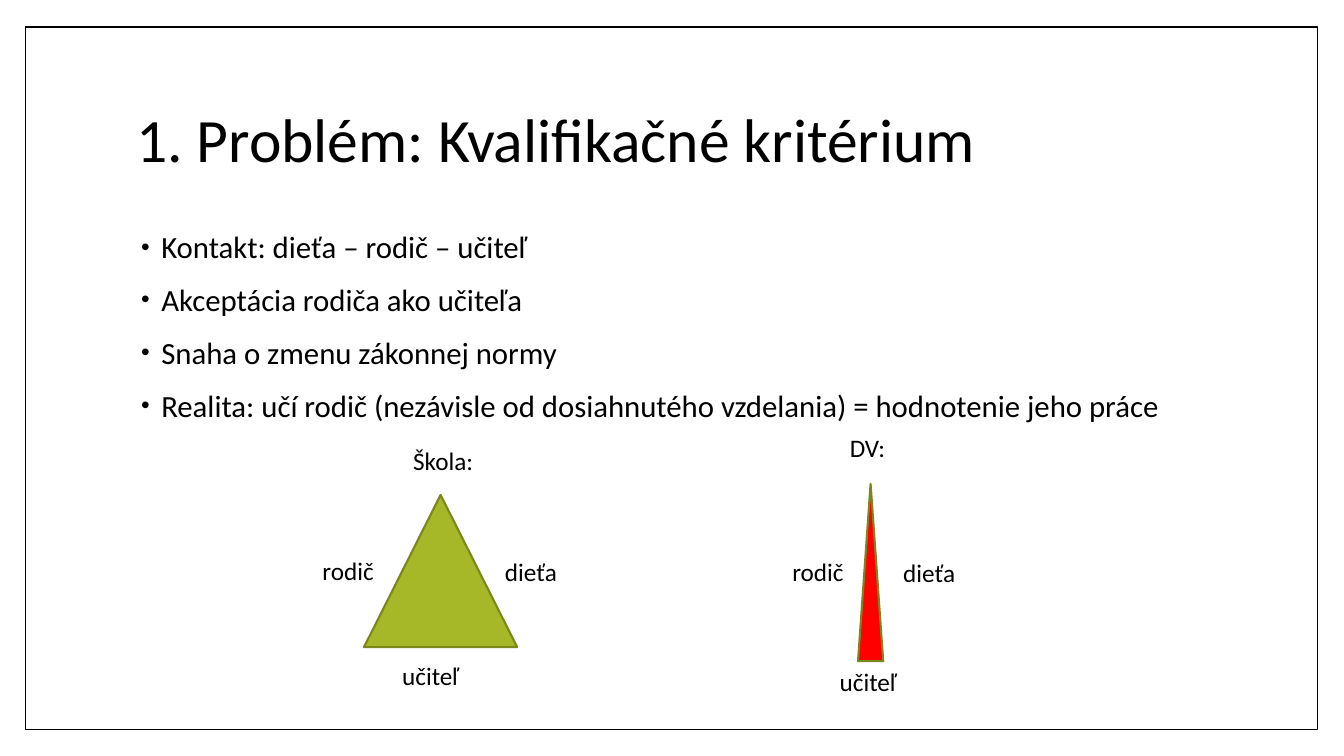
"""Build the slide that compares the contact triangles of school and home education."""
from typing import NamedTuple

from lxml.etree import SubElement
from pptx import Presentation
from pptx.dml.color import RGBColor
from pptx.enum.shapes import MSO_SHAPE as Preset
from pptx.enum.text import MSO_ANCHOR as Anchor, MSO_AUTO_SIZE as AutoSize, PP_ALIGN as Align
from pptx.oxml.ns import qn
from pptx.util import Emu, Pt

PX = 9144
COLORS = {
    "paper": "FFFFFF",
    "ink": "000000",
    "school": "A6B727",
    "home": "FF0000",
    "edge": "7B871D",
}
FONT = "Calibri"
TITLE = "1. Problém: Kvalifikačné kritérium"
POINTS = [
    "Kontakt: dieťa – rodič – učiteľ",
    "Akceptácia rodiča ako učiteľa",
    "Snaha o\u00a0zmenu zákonnej normy".replace("\u00a0", " "),
    "Realita: učí rodič (nezávisle od dosiahnutého vzdelania) = hodnotenie jeho práce",
]


class Box(NamedTuple):
    left: int
    top: int
    width: int
    height: int


class Figure(NamedTuple):
    preset: Preset
    box: Box
    fill: str
    line: str
    weight: float


class Label(NamedTuple):
    text: str
    box: Box


FRAME = Figure(Preset.RECTANGLE, Box(25, 27, 1282, 697), "paper", "ink", 1)
TRIANGLES = [
    Figure(Preset.ISOSCELES_TRIANGLE, Box(361, 491, 152, 151), "school", "edge", 1.5),
    Figure(Preset.ISOSCELES_TRIANGLE, Box(851, 480, 25, 176), "home", "edge", 1.5),
]
LABELS = [
    Label("učiteľ", Box(389, 650, 82, 40)),
    Label("učiteľ", Box(823, 656, 82, 40)),
    Label("rodič", Box(310, 546, 129, 42)),
    Label("rodič", Box(776, 547, 129, 42)),
    Label("dieťa", Box(491, 547, 97, 41)),
    Label("dieťa", Box(886, 548, 97, 41)),
    Label("Škola:", Box(400, 437, 97, 40)),
    Label("DV:", Box(833, 424, 66, 40)),
]


def color(name: str) -> RGBColor:
    return RGBColor.from_string(COLORS[name])


def emu(box: Box) -> list[Emu]:
    return [Emu(length * PX) for length in box]


def place(shape, box: Box) -> None:
    for name, length in zip(Box._fields, emu(box)):
        setattr(shape, name, length)


def write(frame, lines: list[str], size: int, anchor: Anchor, **para_format) -> None:
    frame_format = {"word_wrap": True, "auto_size": AutoSize.NONE, "vertical_anchor": anchor}
    for name, value in frame_format.items():
        setattr(frame, name, value)
    for index, line in enumerate(lines):
        para = frame.paragraphs[0] if index == 0 else frame.add_paragraph()
        for name, value in {"alignment": Align.LEFT, **para_format}.items():
            setattr(para, name, value)
        span = para.add_run()
        span.text = line
        for name, value in {"name": FONT, "size": Pt(size), "bold": False}.items():
            setattr(span.font, name, value)
        span.font.color.rgb = color("ink")


def add_bullet(para) -> None:
    props = para._p.get_or_add_pPr()
    props.set("marL", str(25 * PX))
    props.set("indent", str(-20 * PX))
    SubElement(SubElement(props, qn("a:buClr")), qn("a:srgbClr"), val=COLORS["ink"])
    SubElement(props, qn("a:buSzPct"), val="80000")
    SubElement(props, qn("a:buFont"), typeface="Arial")
    SubElement(props, qn("a:buChar"), char="•")


def draw_figure(page, figure: Figure):
    shape = page.shapes.add_shape(figure.preset, *emu(figure.box))
    shape.shadow.inherit = False
    shape.fill.solid()
    shape.fill.fore_color.rgb = color(figure.fill)
    shape.line.color.rgb = color(figure.line)
    shape.line.width = Pt(figure.weight)
    return shape


def draw_label(page, label: Label) -> None:
    box = page.shapes.add_textbox(*emu(label.box))
    write(box.text_frame, [label.text], 18, Anchor.TOP)


def main() -> None:
    deck = Presentation()
    deck.slide_width, deck.slide_height = Emu(1333 * PX), Emu(750 * PX)
    page = deck.slides.add_slide(deck.slide_layouts[1])
    title, body = page.placeholders

    frame = draw_figure(page, FRAME)
    title.element.addprevious(frame.element)

    place(title, Box(125, 67, 1080, 148))
    write(title.text_frame, [TITLE], 44, Anchor.MIDDLE, line_spacing=0.9)
    place(body, Box(125, 225, 1080, 442))
    write(body.text_frame, POINTS, 22, Anchor.TOP, line_spacing=0.9, space_before=Pt(14))
    for para in body.text_frame.paragraphs:
        add_bullet(para)

    for triangle in TRIANGLES:
        draw_figure(page, triangle)
    for label in LABELS:
        draw_label(page, label)
    deck.save("out.pptx")


if __name__ == "__main__":
    main()
